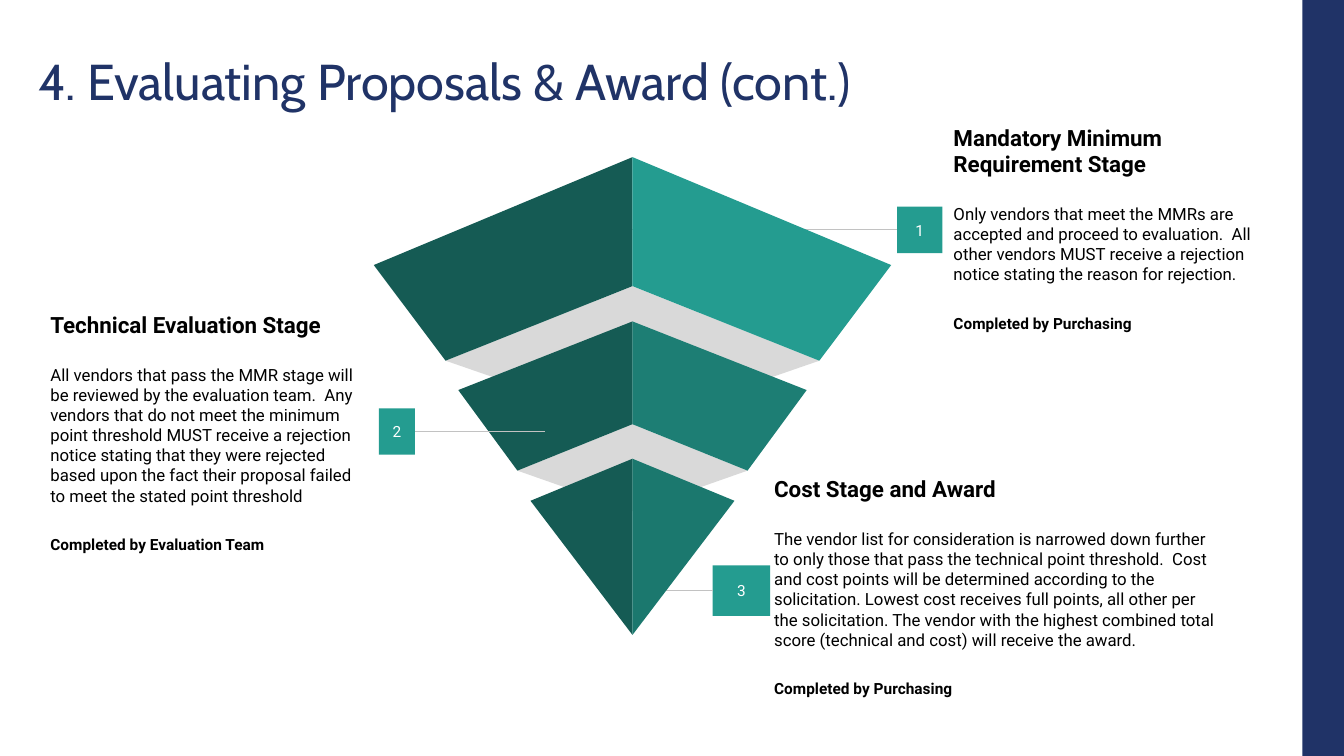
from pptx import Presentation
from pptx.dml.color import RGBColor
from pptx.enum.shapes import MSO_CONNECTOR, MSO_SHAPE
from pptx.enum.text import MSO_ANCHOR as Anchor, PP_ALIGN as Align
from pptx.oxml.ns import qn
from pptx.util import Cm, Pt
from lxml import etree

# Content (lengths in cm)
NAVY, TEAL, DARK_TEAL = "203367", "249C90", "155B54"
GREY, LINE_GREY, BLACK, WHITE = "D9D9D9", "C2C2C2", "000000", "FFFFFF"
TITLE = "4. Evaluating Proposals & Award (cont.)"
LEFT_SIDE, RIGHT_SIDE = 1, 3

STAGES = [
    dict(
        number="1", badge=(22.61, 5.21, 1.14, 1.17), side=LEFT_SIDE, line_end=15.62,
        box=(23.7, 3.18, 8.71, 5.13),
        heading="Mandatory Minimum Requirement Stage",
        body="Only vendors that meet the MMRs are accepted and proceed to evaluation.  "
             "All other vendors MUST receive a rejection notice stating the reason "
             "for rejection.",
        owner="Completed by Purchasing"),
    dict(
        number="2", badge=(9.55, 10.29, 0.91, 1.17), side=RIGHT_SIDE, line_end=13.74,
        box=(0.94, 8.33, 8.64, 5.13),
        heading="Technical Evaluation Stage",
        body="All vendors that pass the MMR stage will be reviewed by the evaluation "
             "team.  Any vendors that do not meet the minimum point threshold MUST "
             "receive a rejection notice stating that they were rejected based upon "
             "the fact their proposal failed to meet the stated point threshold",
        owner="Completed by Evaluation Team"),
    dict(
        number="3", badge=(17.96, 14.25, 1.45, 1.27), side=LEFT_SIDE, line_end=16.61,
        box=(19.18, 12.01, 11.94, 5.54),
        heading="Cost Stage and Award",
        body="The vendor list for consideration is narrowed down further to only those "
             "that pass the technical point threshold.  Cost and cost points will be "
             "determined according to the solicitation. Lowest cost receives full "
             "points, all other per the solicitation. The vendor with the highest "
             "combined total score (technical and cost) will receive the award.",
        owner="Completed by Purchasing"),
]

# Half widths and heights of each tier, from top to bottom
CENTRE = 15.94
TIERS = [
    dict(shoulder=(6.52, 6.68), foot=(4.71, 9.09), apex=3.96, notch=7.21,
         shade_tip=10.72, right=TEAL),
    dict(shoulder=(4.39, 9.83), foot=(2.9, 11.86), apex=8.1, notch=10.69,
         shade_tip=12.88, right="1D7E74"),
    dict(shoulder=(2.57, 12.62), foot=None, apex=11.56, notch=16,
         shade_tip=None, right="1B786E"),
]

presentation = Presentation()
presentation.slide_width, presentation.slide_height = Cm(33.87), Cm(19.05)
slide = presentation.slides.add_slide(presentation.slide_layouts[6])
shapes = slide.shapes


def colour(value):
    return RGBColor.from_string(value)


def paint(shape, fill):
    shape.fill.solid()
    shape.fill.fore_color.rgb = colour(fill)
    shape.line.fill.background()
    shape.shadow.inherit = False


def add_rectangle(frame, fill):
    shape = shapes.add_shape(MSO_SHAPE.RECTANGLE, *map(Cm, frame))
    paint(shape, fill)
    return shape


def set_font(paragraph, name, size, ink, bold=False):
    font = paragraph.font
    font.name, font.size, font.bold = name, Pt(size), bold
    font.color.rgb = colour(ink)


def set_frame(shape, inset_x, inset_y):
    frame = shape.text_frame
    frame.word_wrap = True
    frame.vertical_anchor = Anchor.MIDDLE
    frame.margin_left = frame.margin_right = Cm(inset_x)
    frame.margin_top = frame.margin_bottom = Cm(inset_y)
    return frame


def add_polygon(offsets, fill):
    """Draw a polygon from (distance from the centre line, y) pairs."""
    points = [(Cm(CENTRE + x), Cm(y)) for x, y in offsets]
    builder = shapes.build_freeform(*points[0])
    builder.add_line_segments(points[1:])
    paint(builder.convert_to_shape(), fill)


def add_tier(tier):
    apex, notch = (0, tier["apex"]), (0, tier["notch"])
    outline = [apex, tier["shoulder"], notch]
    if tier["foot"]:
        x, y = tier["foot"]
        outline.insert(2, tier["foot"])
        add_polygon([(-x, y), notch, (x, y), (0, tier["shade_tip"])], GREY)
    add_polygon([(-x, y) for x, y in outline], DARK_TEAL)
    add_polygon(outline, tier["right"])


def add_stage(stage):
    # Description
    frame = set_frame(shapes.add_textbox(*map(Cm, stage["box"])), 0.33, 0.33)
    rows = [("heading", 16, True, 0), ("body", 12, False, 18.75), ("owner", 11, True, 21)]
    for index, (key, size, bold, gap) in enumerate(rows):
        paragraph = frame.add_paragraph() if index else frame.paragraphs[0]
        paragraph.text = stage[key]
        paragraph.space_before = Pt(gap)
        set_font(paragraph, "Roboto", size, BLACK, bold)

    # Numbered badge
    badge = add_rectangle(stage["badge"], TEAL)
    paragraph = set_frame(badge, 0, 0).paragraphs[0]
    paragraph.text = stage["number"]
    paragraph.alignment = Align.CENTER
    set_font(paragraph, "Roboto", 11, WHITE)

    # Line from badge to pyramid
    middle = badge.top + badge.height // 2
    end = Cm(stage["line_end"])
    connector = shapes.add_connector(MSO_CONNECTOR.STRAIGHT, badge.left, middle, end, middle)
    connector.begin_connect(badge, stage["side"])
    connector.line.color.rgb = colour(LINE_GREY)
    connector.line.width = Pt(0.75)
    etree.SubElement(connector._element.spPr, qn("a:effectLst"))


# Side bar and title
add_rectangle((32.82, 0, 1.05, 19.05), NAVY)
title_box = shapes.add_textbox(Cm(0.71), Cm(1.09), Cm(30.81), Cm(2.08))
title = set_frame(title_box, 0.25, 0.13).paragraphs[0]
title.text = TITLE
title.line_spacing = 0.9
set_font(title, "Cabin", 36, NAVY)

# Lines 1 and 3 run behind the pyramid, line 2 in front of it
first, second, third = STAGES
add_stage(first)
add_stage(third)
for tier in TIERS:
    add_tier(tier)
add_stage(second)

presentation.save("out.pptx")
